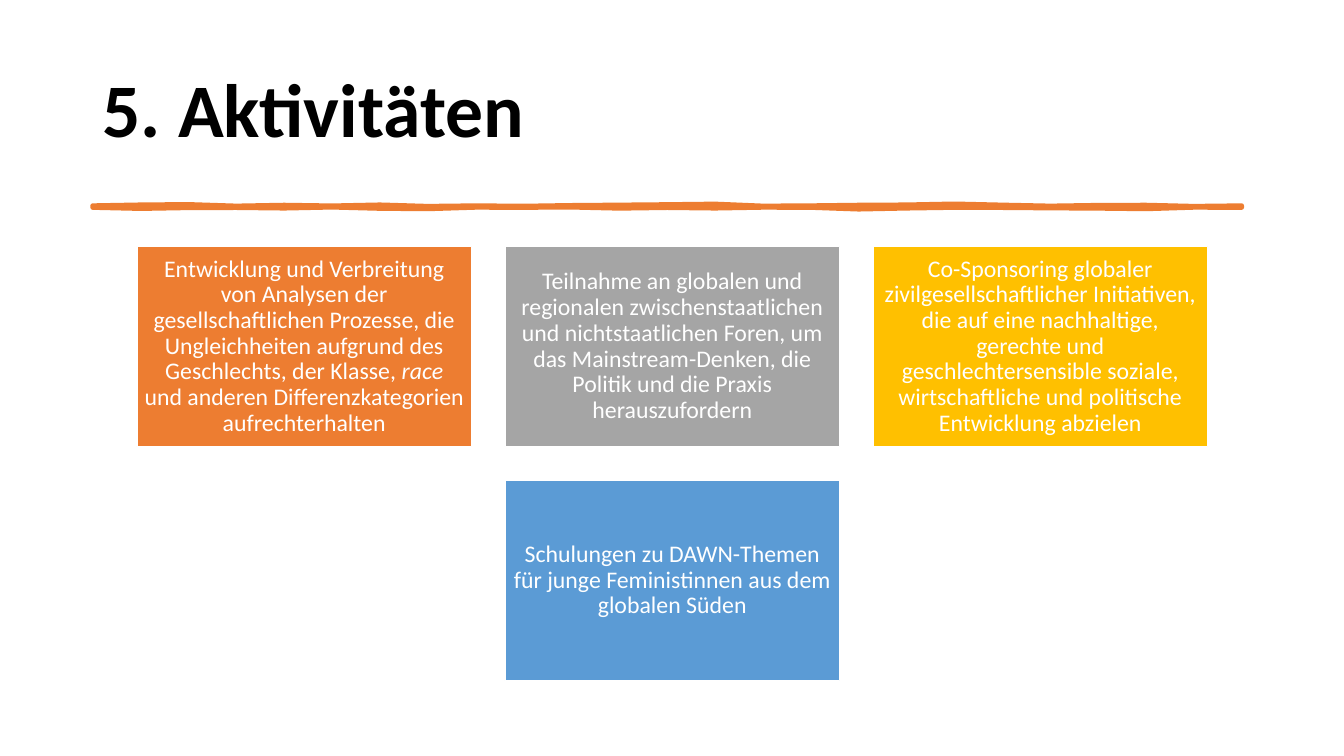
from pptx import Presentation
from pptx.dml.color import RGBColor
from pptx.enum.shapes import MSO_SHAPE
from pptx.enum.text import MSO_ANCHOR, PP_ALIGN
from pptx.oxml import parse_xml
from pptx.oxml.ns import nsdecls
from pptx.util import Pt

ORANGE, GREY, GOLD, BLUE = "ED7D31", "A5A5A5", "FFC000", "5B9BD5"
WHITE, BLACK = "FFFFFF", "000000"

COLUMNS = 3
CARD_WIDTH, CARD_HEIGHT, CARD_GAP = 239, 143.2, 23.9

ACTIVITIES = [
    (ORANGE, [
        ("Entwicklung und Verbreitung von Analysen der gesellschaftlichen Prozesse, "
         "die Ungleichheiten aufgrund des Geschlechts, der Klasse, ", False),
        ("race", True),
        (" und anderen Differenzkategorien aufrechterhalten", False)]),
    (GREY, [
        ("Teilnahme an globalen und regionalen zwischenstaatlichen und nichtstaatlichen "
         "Foren, um das Mainstream-Denken, die Politik und die Praxis herauszufordern", False)]),
    (GOLD, [
        ("Co-Sponsoring globaler zivilgesellschaftlicher Initiativen, die auf eine "
         "nachhaltige, gerechte und geschlechtersensible soziale, wirtschaftliche und "
         "politische Entwicklung abzielen", False)]),
    (BLUE, [
        ("Schulungen zu DAWN-Themen für junge Feministinnen aus dem globalen Süden", False)]),
]

RULE_TOP = [0, -0.6, -0.9, 0.2, -0.4, 0.1, -0.6, 0.4, 0, 0.3, -0.2, -0.5, -0.8,
            -1.2, 0.2, 0, -0.4, -0.6, -1.3, -0.5, 0.2, -0.3, -0.4, 0.4, 0]
RULE_BOTTOM = [1.4, 2.2, 1.6, 1.5, 1.9, 1.2, 2.1, 2.4, 1.3, 1.4, 1.2, 2, 1.5,
               1.9, 1.3, 1.4, 2.6, 1.9, 1.4, 1.5, 1.8, 2, 2.4, 1.3, 1.4]


def color(value):
    return RGBColor.from_string(value)


def paint(shape, fill, line, line_width):
    shape.shadow.inherit = False
    shape.fill.solid()
    shape.fill.fore_color.rgb = color(fill)
    shape.line.color.rgb = color(line)
    shape.line.width = Pt(line_width)


def write(frame, spans, align, inset, size, ink, bold=False):
    side, edge = inset
    settings = {"word_wrap": True, "vertical_anchor": MSO_ANCHOR.MIDDLE,
                "margin_left": Pt(side), "margin_right": Pt(side),
                "margin_top": Pt(edge), "margin_bottom": Pt(edge)}
    for name, value in settings.items():
        setattr(frame, name, value)
    para = frame.paragraphs[0]
    para.alignment = align
    para.line_spacing = 0.9
    for text, italic in spans:
        span = para.add_run()
        span.text = text
        span.font.color.rgb = color(ink)
        style = {"name": "Calibri", "size": Pt(size), "bold": bold, "italic": italic}
        for name, value in style.items():
            setattr(span.font, name, value)


def add_title(page, box, text):
    title = page.shapes.add_textbox(*map(Pt, box))
    write(title.text_frame, [(text, False)], PP_ALIGN.LEFT, (7.2, 3.6), 54, BLACK, bold=True)


def add_brush_rule(page, box):
    left, top, width = box
    step = width / (len(RULE_TOP) - 1)
    upper = [(left + i * step, top + offset) for i, offset in enumerate(RULE_TOP)]
    lower = [(left + i * step, top + offset) for i, offset in enumerate(RULE_BOTTOM)]
    outline = [(Pt(x), Pt(y)) for x, y in upper + lower[::-1]]
    builder = page.shapes.build_freeform(*outline[0])
    builder.add_line_segments(outline[1:], close=True)
    rule = builder.convert_to_shape()
    paint(rule, ORANGE, ORANGE, 3.25)
    rule.line._get_or_add_ln().append(parse_xml(f"<a:round {nsdecls('a')}/>"))


def add_card(page, box, fill, spans):
    card = page.shapes.add_shape(MSO_SHAPE.RECTANGLE, *map(Pt, box))
    paint(card, fill, WHITE, 1)
    write(card.text_frame, spans, PP_ALIGN.CENTER, (5.1, 5.1), 17, WHITE)


def add_activities(page, box):
    left, top, width = box
    for start in range(0, len(ACTIVITIES), COLUMNS):
        row = ACTIVITIES[start:start + COLUMNS]
        row_width = len(row) * (CARD_WIDTH + CARD_GAP) - CARD_GAP
        row_left = left + (width - row_width) / 2
        row_top = top + start // COLUMNS * (CARD_HEIGHT + CARD_GAP)
        for column, (fill, spans) in enumerate(row):
            card_left = row_left + column * (CARD_WIDTH + CARD_GAP)
            add_card(page, (card_left, row_top, CARD_WIDTH, CARD_HEIGHT), fill, spans)


def main():
    deck = Presentation()
    deck.slide_width, deck.slide_height = Pt(960), Pt(540)
    page = deck.slides.add_slide(deck.slide_layouts[6])
    add_title(page, (66.2, 28.8, 828, 104.4), "5. Aktivitäten")
    add_brush_rule(page, (66.2, 146.9, 820.8))
    add_activities(page, (66.2, 175.9, 828))
    deck.save("out.pptx")


if __name__ == "__main__":
    main()
